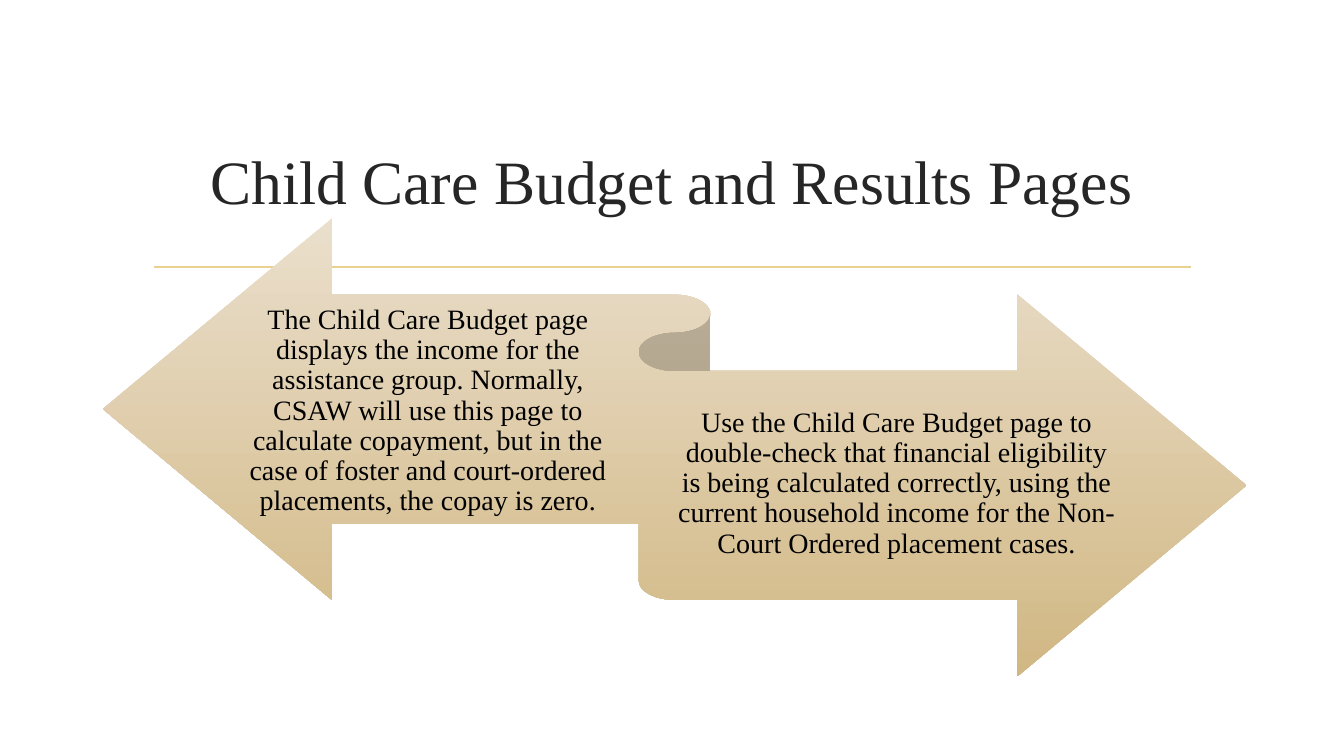
from lxml.etree import SubElement
from pptx import Presentation
from pptx.dml.color import RGBColor
from pptx.enum.shapes import MSO_CONNECTOR, MSO_SHAPE
from pptx.enum.text import MSO_ANCHOR, PP_ALIGN
from pptx.oxml.ns import qn
from pptx.util import Emu, Pt

EMU_PER_PX = 9525
BUDGET_TEXT = (
    "The Child Care Budget page displays the income for the assistance group. "
    "Normally, CSAW will use this page to calculate copayment, but in the case "
    "of foster and court-ordered placements, the copay is zero."
)
CHECK_TEXT = (
    "Use the Child Care Budget page to double-check that financial eligibility "
    "is being calculated correctly, using the current household income for the "
    "Non-Court Ordered placement cases."
)


def px(*lengths):
    return [Emu(length * EMU_PER_PX) for length in lengths]


def color(value):
    return RGBColor.from_string(value)


def add_rule(page, left, right, y, line_color, width):
    rule = page.shapes.add_connector(MSO_CONNECTOR.STRAIGHT, *px(left, y, right, y))
    rule.line.color.rgb = color(line_color)
    rule.line.width = Pt(width)
    SubElement(rule.element.spPr, qn("a:effectLst"))


def add_ribbon(page, bounds, top_color, bottom_color):
    ribbon = page.shapes.add_shape(MSO_SHAPE.LEFT_RIGHT_RIBBON, *px(*bounds))
    ribbon.shadow.inherit = False
    ribbon.line.fill.background()
    ribbon.fill.gradient()
    ribbon.fill.gradient_angle = 270
    for stop, value in zip(ribbon.fill.gradient_stops, (top_color, bottom_color)):
        stop.color.rgb = color(value)


def add_text(page, text, bounds, size=20, font_color="000000", spacing=0.9,
             side_inset=0, end_inset=8):
    box = page.shapes.add_textbox(*px(*bounds))
    frame = box.text_frame
    frame.word_wrap = True
    frame.vertical_anchor = MSO_ANCHOR.MIDDLE
    frame.margin_left, frame.margin_right = px(side_inset, side_inset)
    frame.margin_top, frame.margin_bottom = px(end_inset, end_inset)
    para = frame.paragraphs[0]
    para.alignment = PP_ALIGN.CENTER
    para.line_spacing = spacing
    span = para.add_run()
    span.text = text
    span.font.name = "Times New Roman"
    span.font.size = Pt(size)
    span.font.color.rgb = color(font_color)


def main():
    deck = Presentation()
    deck.slide_width, deck.slide_height = px(1280, 720)
    page = deck.slides.add_slide(deck.slide_layouts[6])
    add_rule(page, 147, 1134, 254, "E8D191", 1.25)
    add_text(page, "Child Care Budget and Results Pages", (136, 103, 1008, 137),
             size=44, font_color="262626", spacing=1.0, side_inset=10, end_inset=5)
    add_ribbon(page, (98, 208, 1089, 436), "EADFCC", "D1B783")
    add_text(page, BUDGET_TEXT, (228, 285, 359, 213))
    add_text(page, CHECK_TEXT, (642, 354, 424, 213))
    deck.save("out.pptx")


if __name__ == "__main__":
    main()
